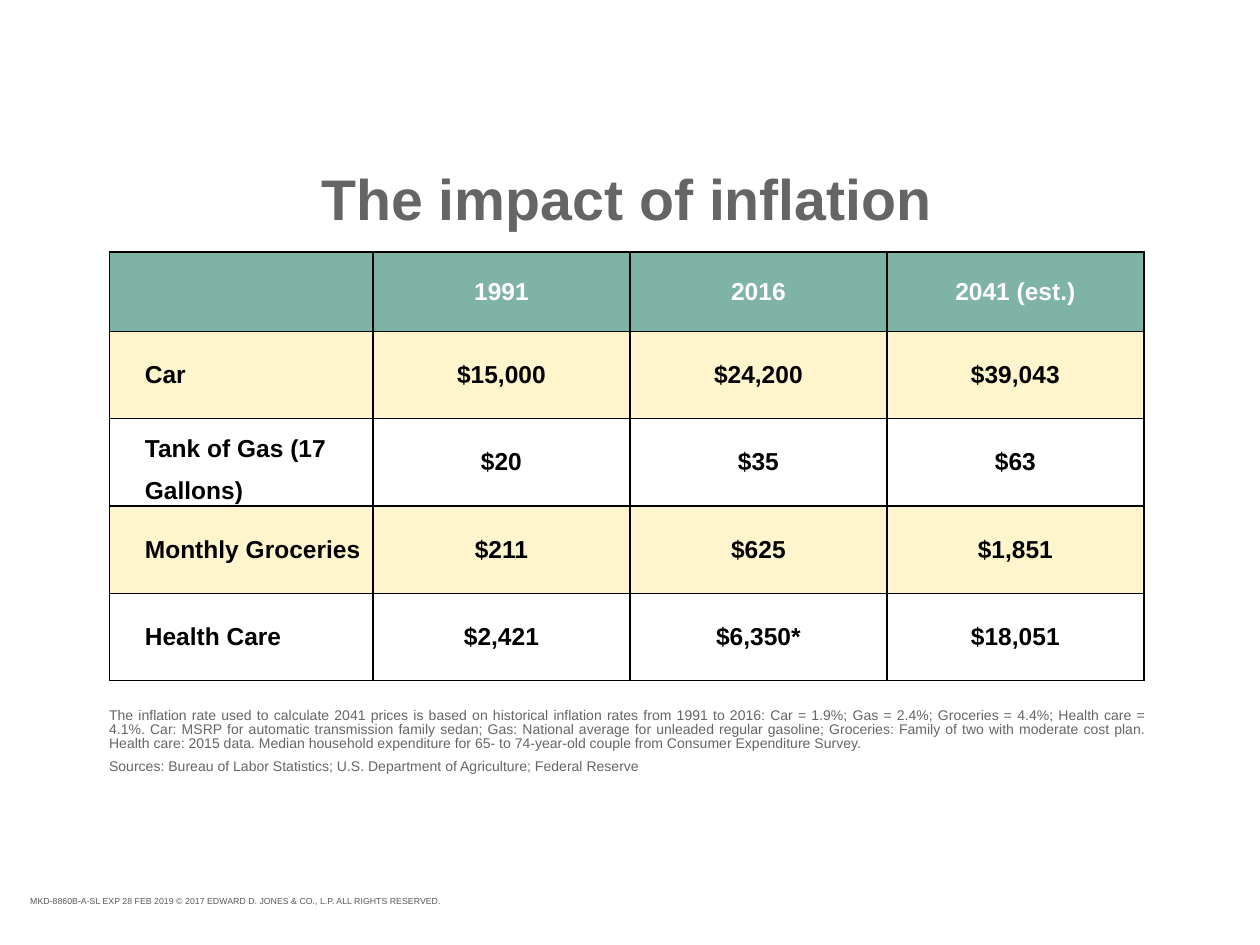
from lxml.etree import SubElement
from pptx import Presentation
from pptx.dml.color import RGBColor
from pptx.enum.text import MSO_ANCHOR as ANCHOR, MSO_AUTO_SIZE as AUTO, PP_ALIGN as ALIGN
from pptx.oxml.ns import qn
from pptx.util import Cm, Pt

COLORS = {
    "gray": "656566", "footer": "57585A", "header": "7FB3A6",
    "band": "FEF5CD", "white": "FFFFFF", "black": "000000",
}
HEADERS = ["", "1991", "2016", "2041 (est.)"]
PRICES = [
    ["Car", "$15,000", "$24,200", "$39,043"],
    ["Tank of Gas (17 Gallons)", "$20", "$35", "$63"],
    ["Monthly Groceries", "$211", "$625", "$1,851"],
    ["Health Care", "$2,421", "$6,350*", "$18,051"],
]
NOTE = (
    "The inflation rate used to calculate 2041 prices is based on historical inflation rates "
    "from 1991 to 2016: Car = 1.9%; Gas = 2.4%; Groceries = 4.4%; Health care = 4.1%. "
    "Car: MSRP for automatic transmission family sedan; Gas: National average for unleaded "
    "regular gasoline; Groceries: Family of two with moderate cost plan. Health care: 2015 data. "
    "Median household expenditure for 65- to 74-year-old couple from Consumer Expenditure Survey."
)
SOURCES = "Sources: Bureau of Labor Statistics; U.S. Department of Agriculture; Federal Reserve"
COPYRIGHT = "MKD-8860B-A-SL EXP 28 FEB 2019 © 2017 EDWARD D. JONES & CO., L.P. ALL RIGHTS RESERVED."


def rgb(name):
    """Return the named palette colour."""
    return RGBColor.from_string(COLORS[name])


def write(p, text, size, color, bold=False, align=ALIGN.LEFT, line=None, after=0, indent=0):
    """Write one formatted run into a paragraph."""
    if indent:
        p._p.get_or_add_pPr().set("marL", str(Cm(indent)))
    p.alignment = align
    p.space_before, p.space_after = Pt(0), Pt(after)
    if line:
        p.line_spacing = Pt(line)
    r = p.add_run()
    r.text = text
    r.font.name, r.font.size, r.font.bold = "Arial", Pt(size), bold
    r.font.color.rgb = rgb(color)


def set_frame(tf, wrap=True):
    """Clear the margins of a text frame and anchor it at the top."""
    tf.margin_left = tf.margin_right = tf.margin_top = tf.margin_bottom = 0
    tf.vertical_anchor = ANCHOR.TOP
    tf.word_wrap, tf.auto_size = wrap, AUTO.NONE
    return tf


def add_title(slide, x, y, w, h):
    """Place the slide title in its placeholder."""
    sp = slide.shapes.title
    sp.left, sp.top, sp.width, sp.height = Cm(x), Cm(y), Cm(w), Cm(h)
    tf = set_frame(sp.text_frame, wrap=False)
    write(tf.paragraphs[0], "The impact of inflation", 32.7, "gray", bold=True, align=ALIGN.CENTER)


def format_cell(cell, fill):
    """Give a cell its borders, fill and margins."""
    tc_pr = cell._tc.get_or_add_tcPr()
    for side in ("lnL", "lnR", "lnT", "lnB"):
        ln = SubElement(tc_pr, qn(f"a:{side}"), w=str(Pt(1)))
        SubElement(SubElement(ln, qn("a:solidFill")), qn("a:srgbClr"), val=COLORS["black"])
    if fill:
        cell.fill.solid()
        cell.fill.fore_color.rgb = rgb(fill)
    else:
        cell.fill.background()
    cell.margin_left = cell.margin_right = cell.margin_top = cell.margin_bottom = 0
    cell.vertical_anchor = ANCHOR.MIDDLE


def add_price_table(slide, x, y, w, h, label_w=5.31, header_h=1.6):
    """Place the price table with a label column and a header row."""
    rows = [HEADERS] + PRICES
    n_rows, n_cols = len(rows), len(HEADERS)
    table = slide.shapes.add_table(n_rows, n_cols, Cm(x), Cm(y), Cm(w), Cm(h)).table
    table.first_row = table.horz_banding = False
    for j, col in enumerate(table.columns):
        col.width = Cm((w - label_w) / (n_cols - 1) if j else label_w)
    for i, row in enumerate(table.rows):
        row.height = Cm((h - header_h) / (n_rows - 1) if i else header_h)
        fill = "header" if i == 0 else "band" if i % 2 else None
        for j, text in enumerate(rows[i]):
            cell = table.cell(i, j)
            format_cell(cell, fill)
            if text:
                write(cell.text_frame.paragraphs[0], text, 14, "black" if i else "white", bold=True,
                      align=ALIGN.CENTER if j else ALIGN.LEFT, indent=0 if j else 0.71,
                      line=24.5 if "Gallons" in text else None)


def add_notes(slide, x, y, w, h):
    """Place the method note and the sources."""
    tf = set_frame(slide.shapes.add_textbox(Cm(x), Cm(y), Cm(w), Cm(h)).text_frame)
    write(tf.paragraphs[0], NOTE, 8, "gray", align=ALIGN.JUSTIFY, line=8, after=3.6)
    write(tf.add_paragraph(), SOURCES, 8, "gray", align=ALIGN.JUSTIFY)


def add_copyright(slide, x, y, w, h):
    """Place the copyright line."""
    tf = set_frame(slide.shapes.add_textbox(Cm(x), Cm(y), Cm(w), Cm(h)).text_frame, wrap=False)
    write(tf.paragraphs[0], COPYRIGHT, 5, "footer")


def main():
    """Build and save the slide."""
    prs = Presentation()
    prs.slide_width, prs.slide_height = Cm(25.4), Cm(19.05)
    slide = prs.slides.add_slide(prs.slide_layouts[5])
    add_title(slide, 6.2, 3.3, 12.88, 1.07)
    add_price_table(slide, 2.21, 5.08, 20.85, 8.64)
    add_notes(slide, 2.2, 14.3, 20.93, 1.37)
    add_copyright(slide, 0.61, 18.06, 9.04, 0.23)
    prs.save("out.pptx")


if __name__ == "__main__":
    main()
